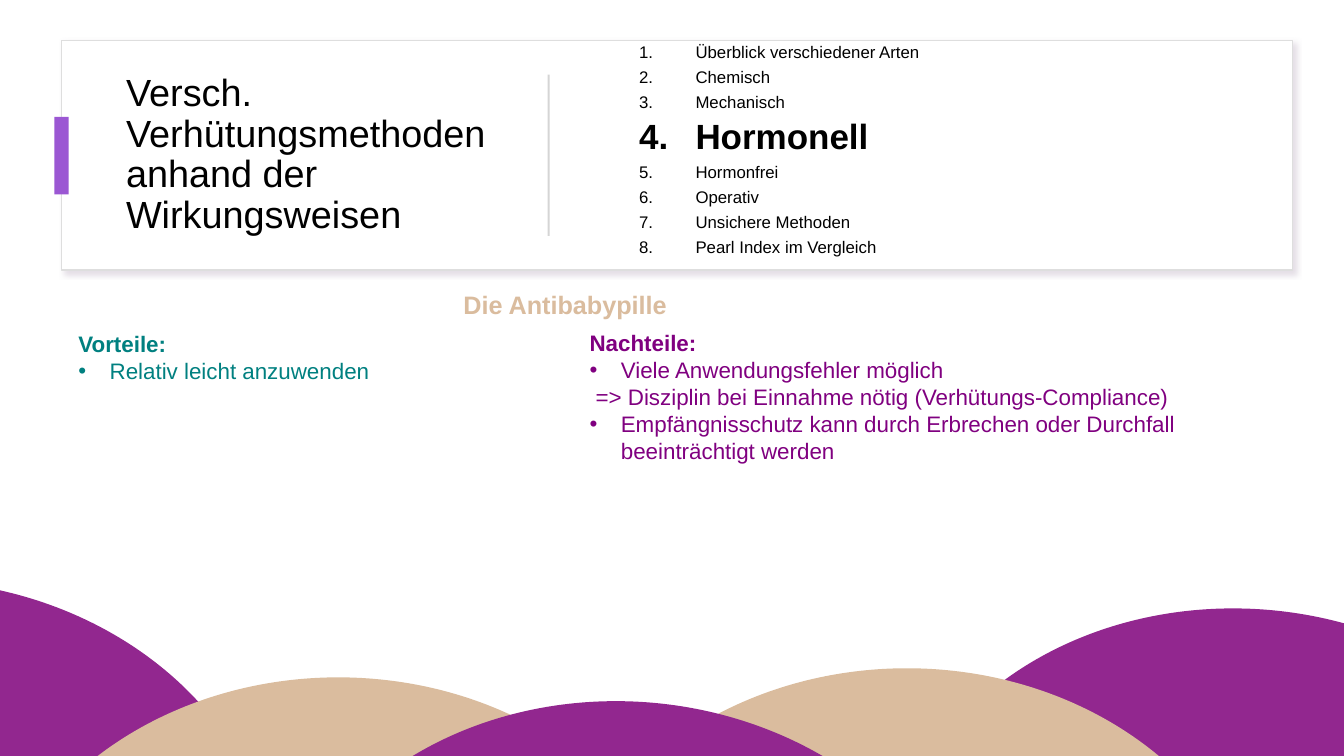
from dataclasses import dataclass
from typing import Optional

from lxml.etree import SubElement
from pptx import Presentation
from pptx.dml.color import RGBColor
from pptx.enum.shapes import MSO_SHAPE as Preset
from pptx.enum.text import MSO_ANCHOR as Anchor, MSO_AUTO_SIZE as AutoSize, PP_ALIGN as Align
from pptx.oxml.ns import qn
from pptx.util import Inches, Pt

WHITE = RGBColor(0xFF, 0xFF, 0xFF)
BLACK = RGBColor(0, 0, 0)
BORDER_GREY = RGBColor(0xDE, 0xDE, 0xDE)
DIVIDER_GREY = RGBColor(0xD5, 0xD5, 0xD5)
ACCENT = RGBColor(0x9B, 0x57, 0xD3)
PLUM = RGBColor(0x92, 0x27, 0x8F)
SAND = RGBColor(0xDA, 0xBC, 0x9E)
TEAL = RGBColor(0, 0x80, 0x80)
PURPLE = RGBColor(0x80, 0, 0x80)
SHADOW = "CABECD"
FONT = "Arial"
HILL_WIDTH, HILL_HEIGHT = 7.13, 6.07


@dataclass(frozen=True)
class Box:
    left: float
    top: float
    width: float
    height: float

    def inches(self) -> tuple:
        return tuple(Inches(v) for v in (self.left, self.top, self.width, self.height))


@dataclass(frozen=True)
class Line:
    text: str
    size: float = 16
    bold: bool = False
    bullet: Optional[str] = None  # "•" or "1." for automatic numbers
    margin: float = 0
    hanging: float = 0


@dataclass(frozen=True)
class Hill:
    left: float
    top: float
    color: RGBColor
    rotation: float = 0


AGENDA = ["Überblick verschiedener Arten", "Chemisch", "Mechanisch", "Hormonell",
          "Hormonfrei", "Operativ", "Unsichere Methoden", "Pearl Index im Vergleich"]
CURRENT_TOPIC = "Hormonell"

HILLS = [
    Hill(-4.38, 5.76, PLUM, 4.8),
    Hill(-0.21, 6.72, SAND),
    Hill(8.76, 6.04, PLUM, 4.8),
    Hill(5.43, 6.63, SAND),
    Hill(2.64, 6.96, PLUM, 4.8),
]


def agenda_line(topic: str) -> Line:
    current = topic == CURRENT_TOPIC
    return Line(topic, 25 if current else 12, current, "1.", 1.06, 0.56)


def point(text: str) -> Line:
    return Line(text, bullet="•", margin=0.31, hanging=0.31)


def add_plain_shape(slide, preset, box: Box, fill: RGBColor, rotation: float = 0):
    shape = slide.shapes.add_shape(preset, *box.inches())
    shape.shadow.inherit = False
    shape.fill.solid()
    shape.fill.fore_color.rgb = fill
    shape.line.fill.background()
    shape.rotation = rotation
    return shape


def add_soft_shadow(shape) -> None:
    effects = shape.element.spPr.find(qn("a:effectLst"))
    outer = SubElement(effects, qn("a:outerShdw"), blurRad=str(Pt(4)), dist=str(Pt(3)),
                       dir="2700000", algn="tl", rotWithShape="0")
    color = SubElement(outer, qn("a:srgbClr"), val=SHADOW)
    SubElement(color, qn("a:alpha"), val="50000")


def set_bullet(paragraph, line: Line) -> None:
    properties = paragraph._p.get_or_add_pPr()
    properties.set("marL", str(Inches(line.margin)))
    properties.set("indent", str(Inches(-line.hanging)))
    if line.bullet == "1.":
        SubElement(properties, qn("a:buAutoNum"), type="arabicPeriod")
    elif line.bullet:
        SubElement(properties, qn("a:buFont"), typeface=FONT)
        SubElement(properties, qn("a:buChar"), char=line.bullet)


def write_text(shape, lines: list[Line], *, color: RGBColor, align=Align.LEFT,
               anchor=Anchor.TOP, spacing: float = 1, before: float = 0,
               auto_size=AutoSize.SHAPE_TO_FIT_TEXT) -> None:
    frame = shape.text_frame
    frame.word_wrap = True
    frame.auto_size = auto_size
    frame.vertical_anchor = anchor
    for index, line in enumerate(lines):
        paragraph = frame.add_paragraph() if index else frame.paragraphs[0]
        set_bullet(paragraph, line)
        paragraph.alignment = align
        paragraph.line_spacing = spacing
        paragraph.space_before = Pt(before if index else 0)
        run = paragraph.add_run()
        run.text = line.text
        for font in (paragraph.font, run.font):
            font.name, font.size, font.bold = FONT, Pt(line.size), line.bold
            font.color.rgb = color


def add_text(slide, box: Box, lines: list[Line], **text_format) -> None:
    write_text(slide.shapes.add_textbox(*box.inches()), lines, **text_format)


def add_header(slide) -> None:
    card = add_plain_shape(slide, Preset.RECTANGLE, Box(0.61, 0.4, 12.21, 2.28), WHITE)
    card.line.color.rgb = BORDER_GREY
    card.line.width = Pt(1)
    add_soft_shadow(card)

    title = slide.shapes.title
    slide.shapes.element.append(title.element)  # bring the title in front of the card
    title.left, title.top, title.width, title.height = Box(1.15, 0.64, 4, 1.8).inches()
    header_format = dict(color=BLACK, anchor=Anchor.MIDDLE, spacing=0.9, auto_size=AutoSize.NONE)
    write_text(title, [Line("Versch. Verhütungsmethoden anhand der Wirkungsweisen", 27)],
               **header_format)

    add_plain_shape(slide, Preset.RECTANGLE, Box(0.54, 1.16, 0.14, 0.77), ACCENT)
    add_plain_shape(slide, Preset.RECTANGLE, Box(4.64, 1.53, 1.6, 0.02), DIVIDER_GREY, 90)
    add_text(slide, Box(5.74, 0.4, 6.68, 2.19), [agenda_line(topic) for topic in AGENDA],
             before=5, **header_format)


def main() -> None:
    deck = Presentation()
    deck.slide_width, deck.slide_height = Inches(13.33), Inches(7.5)
    slide = deck.slides.add_slide(deck.slide_layouts[5])

    add_header(slide)
    add_text(slide, Box(-0.5, 2.82, 12.21, 0.4), [Line("Die Antibabypille", 18, True)],
             color=SAND, align=Align.CENTER)
    for hill in HILLS:
        add_plain_shape(slide, Preset.OVAL, Box(hill.left, hill.top, HILL_WIDTH, HILL_HEIGHT),
                        hill.color, hill.rotation)
    add_text(slide, Box(0.68, 3.23, 4.93, 0.94),
             [Line("Vorteile:", bold=True), point("Relativ leicht anzuwenden")], color=TEAL)
    add_text(slide, Box(5.75, 3.22, 7.37, 1.45), [
        Line("Nachteile:", bold=True),
        point("Viele Anwendungsfehler möglich"),
        Line("=> Disziplin bei Einnahme nötig (Verhütungs-Compliance)", margin=0.06),
        point("Empfängnisschutz kann durch Erbrechen oder Durchfall beeinträchtigt werden"),
    ], color=PURPLE)

    deck.save("out.pptx")


if __name__ == "__main__":
    main()
